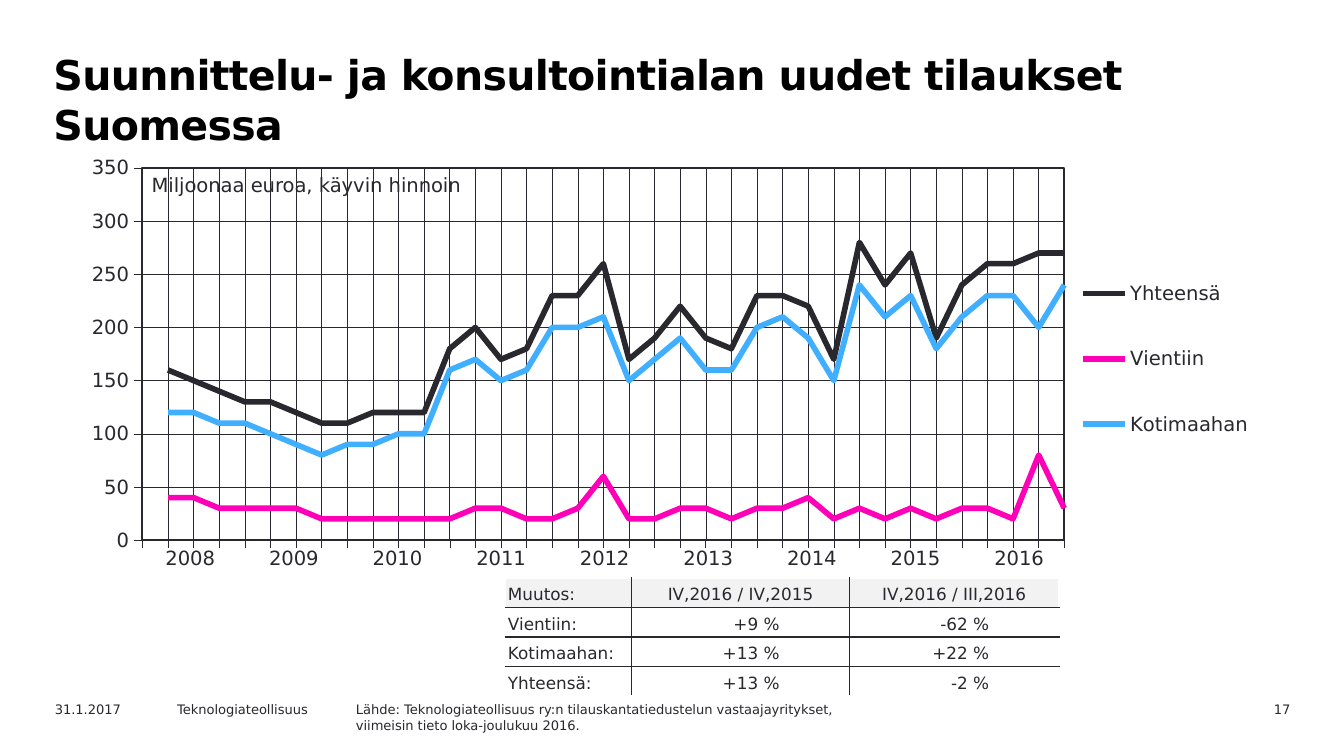
from lxml import etree
from pptx import Presentation
from pptx.chart.data import CategoryChartData
from pptx.dml.color import RGBColor
from pptx.enum.chart import XL_CHART_TYPE, XL_LEGEND_POSITION, XL_MARKER_STYLE, XL_TICK_LABEL_POSITION, XL_TICK_MARK
from pptx.enum.dml import MSO_LINE
from pptx.enum.text import MSO_ANCHOR, PP_ALIGN
from pptx.oxml import parse_xml
from pptx.oxml.ns import nsdecls, qn
from pptx.util import Inches, Pt

LINE = XL_CHART_TYPE.LINE
LEGEND_RIGHT = XL_LEGEND_POSITION.RIGHT
NO_MARKER = XL_MARKER_STYLE.NONE
NO_LABELS = XL_TICK_LABEL_POSITION.NONE
OUTSIDE, NO_TICK = XL_TICK_MARK.OUTSIDE, XL_TICK_MARK.NONE
DOTTED = MSO_LINE.ROUND_DOT
TOP, BOTTOM = MSO_ANCHOR.TOP, MSO_ANCHOR.BOTTOM
LEFT, CENTER, RIGHT = PP_ALIGN.LEFT, PP_ALIGN.CENTER, PP_ALIGN.RIGHT

INK = RGBColor(0x29, 0x28, 0x2E)
BLACK = RGBColor(0, 0, 0)
PINK = RGBColor(0xFF, 0x00, 0xB8)
BLUE = RGBColor(0x40, 0xAF, 0xFF)
PALE = RGBColor(0xF2, 0xF2, 0xF2)
WHITE = RGBColor(0xFF, 0xFF, 0xFF)

FONT = "DejaVu Sans"
NO_STYLE = "{2D5ABB26-0587-4C30-8999-92F81FD0307C}"
TITLE = {"size": Pt(22), "bold": True, "color": BLACK}
LABEL = {"size": Pt(10.5)}
CELL = {"size": Pt(9)}
FOOTER = {"size": Pt(7)}

QUARTERS = [str(n) for n in range(1, 35)]
SERIES = [
    ("Yhteensä ", INK,
     [None, 160, 150, 140, 130, 130, 120, 110, 110, 120, 120, 120, 180, 200, 170, 180, 230, 230, 260,
      170, 190, 220, 190, 180, 230, 230, 220, 170, 280, 240, 270, 190, 240, 260, 260, 270, 270]),
    ("Vientiin ", PINK,
     [None, 40, 40, 30, 30, 30, 30, 20, 20, 20, 20, 20, 20, 30, 30, 20, 20, 30, 60,
      20, 20, 30, 30, 20, 30, 30, 40, 20, 30, 20, 30, 20, 30, 30, 20, 80, 30]),
    ("Kotimaahan ", BLUE,
     [None, 120, 120, 110, 110, 100, 90, 80, 90, 90, 100, 100, 160, 170, 150, 160, 200, 200, 210,
      150, 170, 190, 160, 160, 200, 210, 190, 150, 240, 210, 230, 180, 210, 230, 230, 200, 240]),
]
CHANGES = [
    ("Muutos:", "IV,2016 / IV,2015", "IV,2016 / III,2016"),
    ("Vientiin:", "+9 %", "-62 %"),
    ("Kotimaahan:", "+13 %", "+22 %"),
    ("Yhteensä:", "+13 %", "-2 %"),
]


def set_font(font, style):
    values = {"name": FONT, "bold": False, "color": INK, **style}
    font.color.rgb = values.pop("color")
    for name, value in values.items():
        setattr(font, name, value)


def add_text(s, box, lines, style, align=LEFT, wrap=True):
    tf = s.shapes.add_textbox(*map(Inches, box)).text_frame
    tf.word_wrap = wrap
    for i, line in enumerate(lines):
        p = tf.paragraphs[0] if i == 0 else tf.add_paragraph()
        p.alignment = align
        r = p.add_run()
        r.text = line
        set_font(r.font, style)
    return tf


def add_title(s, box):
    tf = add_text(s, box, ["Suunnittelu- ja konsultointialan uudet tilaukset Suomessa"], TITLE)
    p = tf.paragraphs[0]
    p.line_spacing = Pt(27)
    p._p.get_or_add_pPr().set("marL", str(Inches(0.02)))
    p.runs[0].font._element.set("spc", "-35")


def set_layout(parent, index, part, chart_box, inner=False):
    for old in parent.findall(qn("c:layout")):
        parent.remove(old)
    width, height = chart_box[2:]
    shares = [value / total for value, total in zip(part, (width, height, width, height))]
    layout = etree.Element(qn("c:layout"))
    manual = etree.SubElement(layout, qn("c:manualLayout"))
    values = {"layoutTarget": "inner"} if inner else {}
    values.update(xMode="edge", yMode="edge", **dict(zip("xywh", map(str, shares))))
    for tag, value in values.items():
        etree.SubElement(manual, qn("c:" + tag)).set("val", value)
    parent.insert(index, layout)


def format_axis(axis):
    axis.has_major_gridlines = True
    axis.major_tick_mark = OUTSIDE
    axis.minor_tick_mark = NO_TICK
    set_font(axis.tick_labels.font, LABEL)
    grid = axis.major_gridlines.format.line
    for line, width in ((axis.format.line, 0.22), (grid, 0.25)):
        line.color.rgb = INK
        line.width = Pt(width)
    grid.dash_style = DOTTED


def add_orders_chart(s, box):
    data = CategoryChartData()
    data.categories = QUARTERS
    for name, _, values in SERIES:
        data.add_series(name, values)
    chart = s.shapes.add_chart(LINE, *map(Inches, box), data).chart
    chart.has_title = False
    set_font(chart.font, LABEL)
    for series, (_, color, _) in zip(chart.plots[0].series, SERIES):
        series.smooth = False
        series.marker.style = NO_MARKER
        series.format.line.color.rgb = color
        series.format.line.width = Pt(3)

    quarters, amounts = chart.category_axis, chart.value_axis
    format_axis(quarters)
    format_axis(amounts)
    quarters.tick_label_position = NO_LABELS
    scale = {"minimum_scale": 0, "maximum_scale": 350, "major_unit": 50}
    for name, value in scale.items():
        setattr(amounts, name, value)
    amounts.tick_labels.number_format = "#,##0"
    amounts.tick_labels.number_format_is_linked = False
    value_axis = amounts._element
    for old in value_axis.findall(qn("c:crossBetween")):
        value_axis.remove(old)
    cross = etree.Element(qn("c:crossBetween"), val="midCat")
    value_axis.find(qn("c:crosses")).addnext(cross)

    chart.has_legend = True
    legend = chart.legend
    legend.position = LEGEND_RIGHT
    legend.include_in_layout = False
    set_font(legend.font, LABEL)
    set_layout(legend._element, 1, (7.65, 0.67, 1.47, 1.78), box)
    plot_area = value_axis.getparent()
    set_layout(plot_area, 0, (0.75, 0.14, 6.86, 2.77), box, inner=True)
    for old in plot_area.findall(qn("c:spPr")):
        plot_area.remove(old)
    plot_area.append(parse_xml(
        f'<c:spPr {nsdecls("c", "a")}><a:noFill/><a:ln w="{Pt(1)}"><a:solidFill>'
        f'<a:srgbClr val="{INK}"/></a:solidFill></a:ln></c:spPr>'))


def add_plain_table(s, box, rows, cols):
    table = s.shapes.add_table(rows, cols, *map(Inches, box)).table
    table.first_row = table.horz_banding = False
    table._tbl.tblPr.find(qn("a:tableStyleId")).text = NO_STYLE
    return table


def fill_cell(cell, text, style, align, anchor, margins):
    cell.vertical_anchor = anchor
    for side, value in zip(("left", "top", "right", "bottom"), margins):
        setattr(cell, "margin_" + side, Inches(value))
    p = cell.text_frame.paragraphs[0]
    p.alignment = align
    r = p.add_run()
    r.text = text
    set_font(r.font, style)


def add_years(s, box):
    years = range(2008, 2017)
    table = add_plain_table(s, box, 1, len(years))
    for cell, year in zip(table.iter_cells(), years):
        fill_cell(cell, str(year), LABEL, CENTER, TOP, (0.1, 0.05, 0.1, 0.05))
        cell.fill.background()


def set_borders(cell, colors):
    tcPr = cell._tc.get_or_add_tcPr()
    for i, (side, color) in enumerate(zip("LRTB", colors)):
        tcPr.insert(i, parse_xml(
            f'<a:ln{side} {nsdecls("a")} w="{Pt(1)}"><a:solidFill>'
            f'<a:srgbClr val="{color}"/></a:solidFill></a:ln{side}>'))


def add_changes(s, box):
    last_row, last_col = len(CHANGES) - 1, len(CHANGES[0]) - 1
    table = add_plain_table(s, box, last_row + 1, last_col + 1)
    for col, width in zip(table.columns, (0.94, 1.62, 1.56)):
        col.width = Inches(width)
    for i, row in enumerate(CHANGES):
        for j, text in enumerate(row):
            cell = table.cell(i, j)
            align = LEFT if j == 0 else CENTER if i == 0 else RIGHT
            right = 0.52 if align == RIGHT else 0.02
            fill_cell(cell, text, CELL, align, BOTTOM, (0.02, 0.02, right, 0.02))
            cell.fill.solid()
            cell.fill.fore_color.rgb = PALE if i == 0 else WHITE
            outer = (j == 0, j == last_col, i == 0, i == last_row)
            set_borders(cell, [WHITE if edge else INK for edge in outer])


def add_footer(s, left, top):
    source = ["Lähde: Teknologiateollisuus ry:n tilauskantatiedustelun vastaajayritykset,",
              "viimeisin tieto loka-joulukuu 2016."]
    for x, width, lines, align in ((8.45, 0.94, ["17"], RIGHT), (0, 1, ["31.1.2017"], LEFT),
                                   (0.91, 1.42, ["Teknologiateollisuus"], LEFT), (2.24, 5.07, source, LEFT)):
        add_text(s, (left + x, top, width, 0.18), lines, FOOTER, align)


def main():
    prs = Presentation()
    prs.slide_width = Inches(10)
    prs.slide_height = prs.slide_width * 9 // 16
    s = prs.slides.add_slide(prs.slide_layouts[6])
    add_title(s, (0.28, 0.31, 8.74, 0.71))
    add_footer(s, 0.31, 5.17)
    add_orders_chart(s, (0.31, 1.11, 9.18, 3.33))
    add_years(s, (1.03, 4.02, 6.94, 0.31))
    add_text(s, (1.03, 1.24, 2.6, 0.27), ["Miljoonaa euroa, käyvin hinnoin"], LABEL, wrap=False)
    add_changes(s, (3.76, 4.3, 4.12, 0.88))
    prs.save("out.pptx")


if __name__ == "__main__":
    main()
